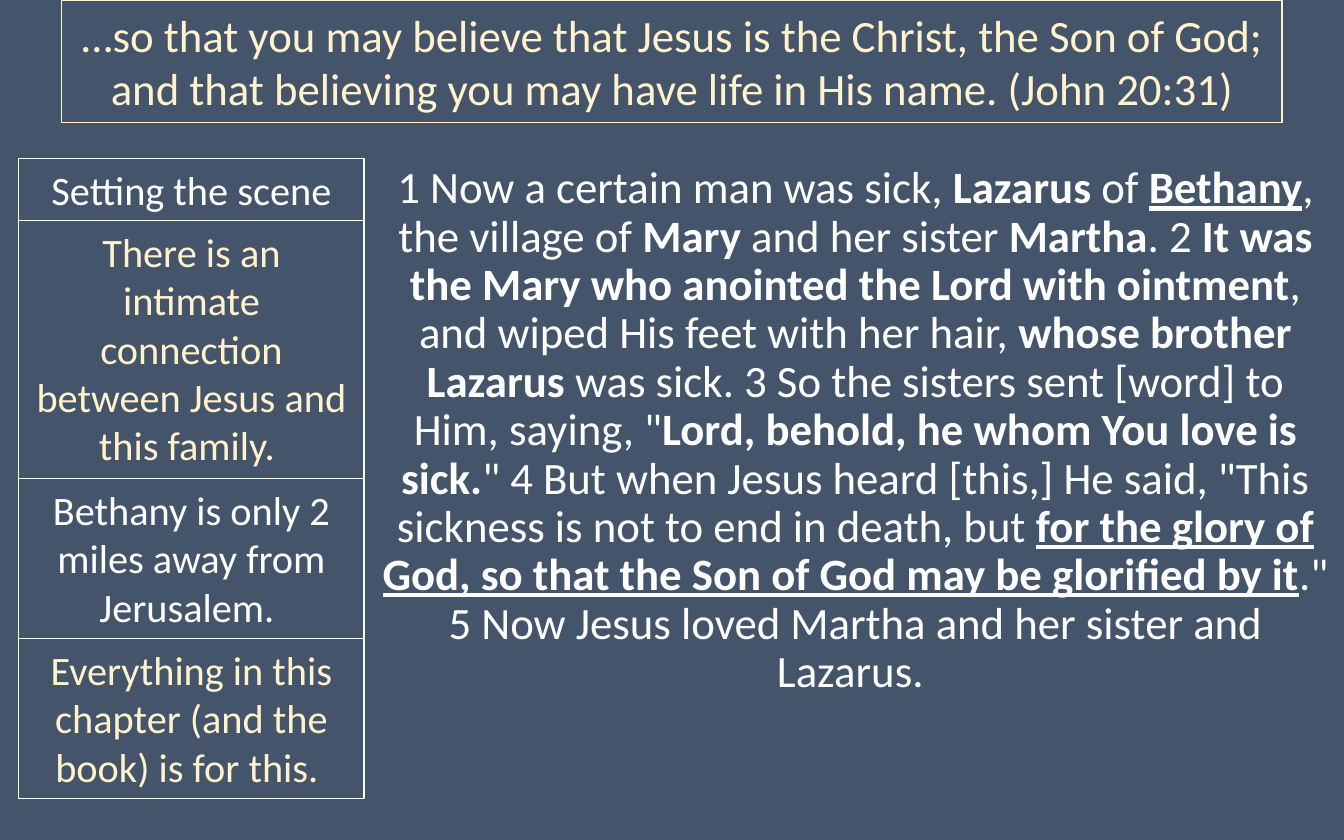
from pptx import Presentation
from pptx.dml.color import RGBColor
from pptx.enum.shapes import MSO_SHAPE as SHAPE
from pptx.enum.text import MSO_ANCHOR as ANCHOR, MSO_AUTO_SIZE as FIT, PP_ALIGN as ALIGN
from pptx.util import Inches, Pt

SLATE = RGBColor(0x44, 0x54, 0x6A)
CREAM = RGBColor(0xFF, 0xF2, 0xCC)
WHITE = RGBColor(0xFF, 0xFF, 0xFF)

prs = Presentation()
prs.slide_width, prs.slide_height = Inches(10), Inches(6.25)
s = prs.slides.add_slide(prs.slide_layouts[6])
s.background.fill.solid()
s.background.fill.fore_color.rgb = SLATE


def add_run(p, text, size, color, style=""):
    r = p.add_run()
    r.text = text
    r.font.name, r.font.size = "Calibri", Pt(size)
    r.font.color.rgb = color
    r.font.bold = "b" in style
    r.font.underline = "u" in style


def add_box(x, y, w, h, text, size, color, line, anchor):
    sp = s.shapes.add_shape(SHAPE.RECTANGLE, Inches(x), Inches(y), Inches(w), Inches(h))
    sp.shadow.inherit = False
    sp.fill.background()
    sp.line.color.rgb, sp.line.width = line, Pt(0.75)
    tf = sp.text_frame
    tf.word_wrap, tf.auto_size, tf.vertical_anchor = True, FIT.SHAPE_TO_FIT_TEXT, anchor
    p = tf.paragraphs[0]
    p.alignment = ALIGN.CENTER
    add_run(p, text, size, color)


PASSAGE = [
    ("1 Now a certain man was sick, ", ""),
    ("Lazarus", "b"),
    (" of ", ""),
    ("Bethany", "bu"),
    (", the village of ", ""),
    ("Mary", "b"),
    (" and her sister ", ""),
    ("Martha", "b"),
    (". 2 ", ""),
    ("It was the Mary who anointed the Lord with ointment", "b"),
    (", and wiped His feet with her hair, ", ""),
    ("whose brother Lazarus", "b"),
    (' was sick. 3 So the sisters sent [word] to Him, saying, "', ""),
    ("Lord, behold, he whom You love is sick.", "b"),
    ('" 4 But when Jesus heard [this,] He said, "This sickness is not to end in death, but ', ""),
    ("for the glory of God, so that the Son of God may be glorified by it", "bu"),
    ('." 5 Now Jesus loved Martha and her sister and Lazarus. ', ""),
]
NOTES = [
    ("Setting the scene", 0.46, WHITE),
    ("There is an intimate connection between Jesus and this family. ", 1.92, CREAM),
    ("Bethany is only 2 miles away from Jerusalem. ", 1.19, WHITE),
    ("Everything in this chapter (and the book) is for this. ", 1.19, CREAM),
]
TOP = 1.18

passage = s.shapes.add_textbox(Inches(2.73), Inches(TOP), Inches(7.27), Inches(6.25 - TOP))
tf = passage.text_frame
tf.word_wrap = True
p = tf.paragraphs[0]
p.alignment, p.line_spacing, p.space_before = ALIGN.CENTER, 0.9, Pt(7.5)
for text, style in PASSAGE:
    add_run(p, text, 24, WHITE, style)

add_box(0.46, 0, 9.08, 0.91,
        "…so that you may believe that Jesus is the Christ, the Son of God; "
        "and that believing you may have life in His name. (John 20:31)",
        24, CREAM, CREAM, ANCHOR.MIDDLE)

y = TOP
for text, height, color in NOTES:
    add_box(0.14, y, 2.57, height, text, 21.6, color, WHITE, ANCHOR.TOP)
    y += height

prs.save("out.pptx")
